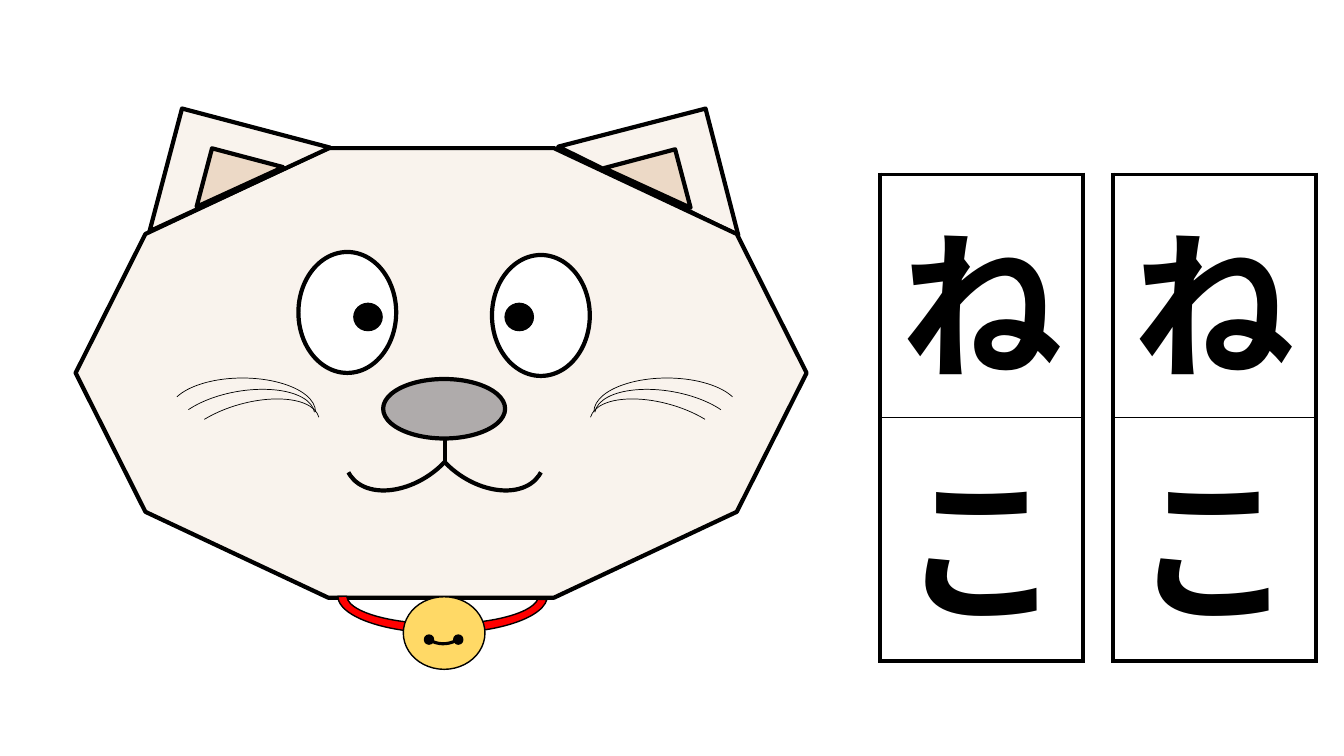
from lxml.etree import SubElement
from pptx import Presentation
from pptx.dml.color import RGBColor
from pptx.enum.shapes import MSO_CONNECTOR, MSO_SHAPE as SHAPE
from pptx.enum.text import MSO_ANCHOR, PP_ALIGN
from pptx.oxml.ns import qn
from pptx.util import Inches, Pt

COLORS = {"black": "000000", "white": "FFFFFF", "fur": "F9F3ED", "ear": "ECD9C6",
          "nose": "AFABAB", "collar": "FF0000", "bell": "FFD966"}
FONT = "Noto Sans CJK JP"
LETTERS = ["ね", "こ"]
TABLE_LEFTS = [11.04, 8.73]
TABLE_TOP, CELL_WIDTH, CELL_HEIGHT = 1.73, 2.01, 1.97
THICK, THIN = 3, 1

# Each part: preset, (left, top, width, height), fill, line width, rotation, flip, adjustments
HEAD = [
    (SHAPE.RIGHT_TRIANGLE, (5.78, 1.14, 1.3, 1.51), "fur", THICK, 75.5, "V", ()),
    (SHAPE.DECAGON, (0.75, 1.47, 7.25, 4.46), "fur", THICK, 0, "", ()),
    (SHAPE.BLOCK_ARC, (3.35, 5.54, 2.08, 0.74), "collar", THIN, 0, "V", (108.21, 214.71, 0.12)),
    (SHAPE.OVAL, (3.8, 3.76, 1.21, 0.59), "nose", THICK, 0, "", ()),
    (SHAPE.OVAL, (2.96, 2.5, 0.97, 1.2), "white", THICK, 0, "", ()),
    (SHAPE.OVAL, (4.88, 2.53, 0.97, 1.2), "white", THICK, 0, "", ()),
    (SHAPE.RIGHT_TRIANGLE, (1.75, 1.12, 1.26, 1.52), "fur", THICK, 284.8, "HV", ()),
    (SHAPE.RIGHT_TRIANGLE, (2.08, 1.49, 0.6, 0.73), "ear", THICK, 284.8, "HV", ()),
    (SHAPE.RIGHT_TRIANGLE, (6.12, 1.5, 0.6, 0.73), "ear", THICK, 75.2, "V", ()),
]
BELL = [
    (SHAPE.OVAL, (4, 5.92, 0.81, 0.72), "bell", THIN, 0, "", ()),
    (SHAPE.ARC, (4.14, 5.87, 0.54, 0.51), None, 2.25, 138.8, "", (170.32, 202.64)),
]
DOTS = [(4.21, 6.3, 0.09, 0.09), (4.5, 6.3, 0.09, 0.09),
        (3.51, 3.01, 0.28, 0.27), (5.01, 3.01, 0.28, 0.27)]
# Each curve: (left, top, width, height), line width, rotation, adjustments, mirror axis
CURVES = [
    ((2.07, 3.36, 0.67, 1.45), 0.5, 270, (169.72, 54), 4.51),
    ((2.07, 3.49, 0.67, 1.45), 0.5, 260, (177.44, 54), 4.51),
    ((2.13, 3.61, 0.67, 1.45), 0.5, 254.3, (184.51, 54), 4.51),
    ((3.57, 3.7, 0.88, 1.3), THICK, 55.6, (200.5, 55.91), 4.41),
]
LIP = (4.41, 4.35, 4.41, 4.58)


def rgb(name):
    return RGBColor.from_string(COLORS[name])


def set_line(s, width):
    s.line.color.rgb = rgb("black")
    s.line.width = Pt(width)


def add_part(shapes, preset, box, fill, width, rotation, flip, adjustments):
    s = shapes.add_shape(preset, *map(Inches, box))
    s.shadow.inherit = False
    if fill:
        s.fill.solid()
        s.fill.fore_color.rgb = rgb(fill)
    else:
        s.fill.background()
    set_line(s, width)
    s.rotation = rotation
    for axis in flip:
        s._element.spPr.get_or_add_xfrm().set("flip" + axis, "1")
    for i, value in enumerate(adjustments):
        s.adjustments[i] = value


def add_curve_pair(shapes, box, width, rotation, adjustments, axis):
    """Draw an arc and its mirror image about the vertical axis."""
    left, top, w, h = box
    mirrored = (2 * axis - left - w, top, w, h)
    add_part(shapes, SHAPE.ARC, box, None, width, rotation, "", adjustments)
    add_part(shapes, SHAPE.ARC, mirrored, None, width, 360 - rotation, "H", adjustments)


def add_cat(slide):
    shapes = slide.shapes.add_group_shape().shapes
    for part in HEAD + BELL:
        add_part(shapes, *part)
    for box in DOTS:
        add_part(shapes, SHAPE.OVAL, box, "black", THIN, 0, "", ())
    for curve in CURVES:
        add_curve_pair(shapes, *curve)
    lip = shapes.add_connector(MSO_CONNECTOR.STRAIGHT, *map(Inches, LIP))
    set_line(lip, THICK)
    SubElement(lip._element.spPr, qn("a:effectLst"))


def set_borders(cell, widths):
    tcPr = cell._tc.get_or_add_tcPr()
    for i, (side, width) in enumerate(zip("LRTB", widths)):
        ln = tcPr.makeelement(qn("a:ln" + side), {"w": str(Pt(width))})
        fill = SubElement(ln, qn("a:solidFill"))
        SubElement(fill, qn("a:srgbClr"), val=COLORS["black"])
        tcPr.insert(i, ln)


def add_letter_table(slide, left):
    rows = len(LETTERS)
    table = slide.shapes.add_table(rows, 1, Inches(left), Inches(TABLE_TOP),
                                   Inches(CELL_WIDTH), Inches(rows * CELL_HEIGHT)).table
    table.first_row = table.horz_banding = False
    for i, letter in enumerate(LETTERS):
        table.rows[i].height = Inches(CELL_HEIGHT)
        cell = table.cell(i, 0)
        cell.fill.background()
        cell.vertical_anchor = MSO_ANCHOR.MIDDLE
        p = cell.text_frame.paragraphs[0]
        p.text = letter
        p.alignment = PP_ALIGN.CENTER
        font = p.runs[0].font
        font.size, font.bold, font.name = Pt(115), True, FONT
        font.color.rgb = rgb("black")
        SubElement(font._element, qn("a:ea"), typeface=FONT)
        top = THIN if i else THICK
        bottom = THICK if i == rows - 1 else THIN
        set_borders(cell, (THICK, THICK, top, bottom))


def main():
    prs = Presentation()
    prs.slide_width, prs.slide_height = Inches(13.33), Inches(7.5)
    slide = prs.slides.add_slide(prs.slide_layouts[6])
    add_cat(slide)
    for left in TABLE_LEFTS:
        add_letter_table(slide, left)
    prs.save("out.pptx")


if __name__ == "__main__":
    main()
